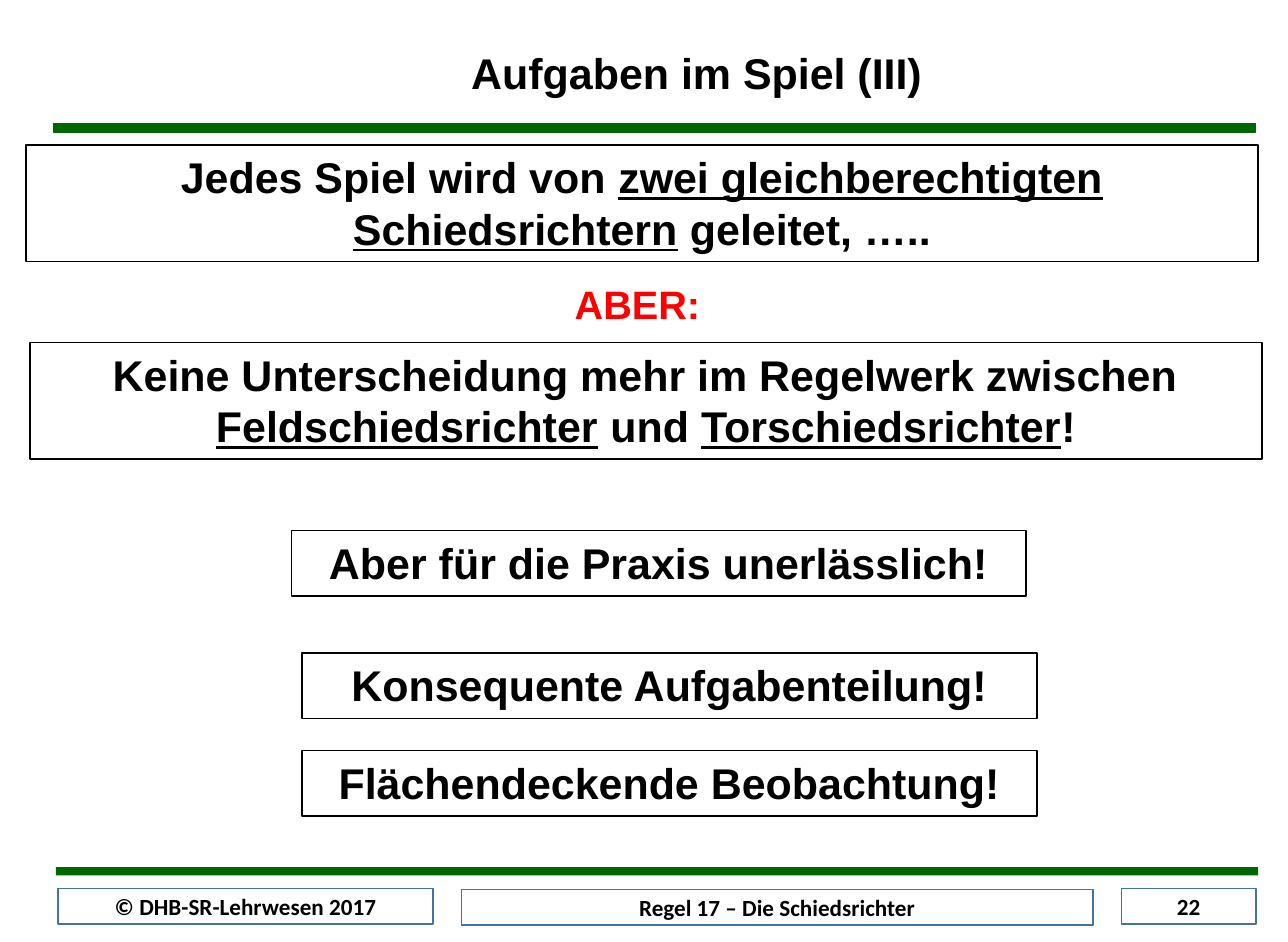
import pptx
import pptx.util
from pptx.dml.color import RGBColor
from pptx.enum.shapes import MSO_SHAPE
from pptx.enum.text import MSO_ANCHOR, PP_ALIGN

Inches, Pt = pptx.util.Inches, pptx.util.Pt
GREEN = RGBColor(0x00, 0x66, 0x00)
BLUE = RGBColor(0x43, 0x73, 0x9E)
BLACK = RGBColor(0x00, 0x00, 0x00)
WHITE = RGBColor(0xFF, 0xFF, 0xFF)
RED = RGBColor(0xFF, 0x00, 0x00)

deck = pptx.Presentation()
deck.slide_width, deck.slide_height = Inches(10.83), Inches(7.92)
page = deck.slides.add_slide(deck.slide_layouts[6])


def add_box(left, top, width, height, fill, line, line_width=1):
    box = page.shapes.add_shape(MSO_SHAPE.RECTANGLE, Inches(left), Inches(top),
                                Inches(width), Inches(height))
    box.shadow.inherit = False
    box.fill.solid()
    box.fill.fore_color.rgb = fill
    box.line.color.rgb = line
    box.line.width = Pt(line_width)
    return box


def write(box, text, size, font="Arial", color=BLACK, anchor=MSO_ANCHOR.TOP):
    """Fill the box with centred bold lines; words between underscores are underlined."""
    frame = box.text_frame
    frame.word_wrap = True
    frame.vertical_anchor = anchor
    frame.margin_left = frame.margin_right = Inches(0.11)
    frame.margin_top = frame.margin_bottom = Inches(0.05)
    for number, line in enumerate(text.split("\n")):
        para = frame.add_paragraph() if number else frame.paragraphs[0]
        para.alignment = PP_ALIGN.CENTER
        para.font.name, para.font.size, para.font.bold = font, Pt(size), True
        para.font.color.rgb = color
        for position, words in enumerate(line.split("_")):
            if words:
                span = para.add_run()
                span.text = words
                if position % 2:
                    span.font.underline = True


# Green rules
add_box(0.45, 1.04, 10.11, 0.07, GREEN, GREEN, 0.75)
add_box(0.47, 7.29, 10.11, 0.07, GREEN, GREEN).line.fill.background()

# Footer
for left, top, width, text in [
    (0.49, 7.47, 3.15, "© DHB-SR-Lehrwesen 2017"),
    (9.43, 7.47, 1.13, "22"),
    (3.88, 7.48, 5.31, "Regel 17 – Die Schiedsrichter"),
]:
    footer = add_box(left, top, width, 0.3, WHITE, BLUE)
    write(footer, text, 14, "Calibri", anchor=MSO_ANCHOR.MIDDLE)

# Framed statements
WIDE, NARROW = (10.36, 0.98), (6.18, 0.55)
for left, top, size, text in [
    (0.22, 1.22, WIDE,
     "Jedes Spiel wird von _zwei gleichberechtigten Schiedsrichtern_ geleitet, ….."),
    (0.25, 2.88, WIDE,
     "Keine Unterscheidung mehr im Regelwerk zwischen\n"
     "_Feldschiedsrichter_ und _Torschiedsrichter_!"),
    (2.54, 5.49, NARROW, "Konsequente Aufgabenteilung!"),
    (2.54, 6.31, NARROW, "Flächendeckende Beobachtung!"),
    (2.45, 4.46, NARROW, "Aber für die Praxis unerlässlich!"),
]:
    write(add_box(left, top, *size, WHITE, BLACK), text, 26)

# Unframed headings
write(add_box(3.88, 2.3, 2.96, 0.51, WHITE, WHITE, 1.5), "ABER:", 24, color=RED)
write(add_box(3.6, 0.34, 4.52, 0.55, WHITE, WHITE), "Aufgaben im Spiel (III)", 26)

deck.save("out.pptx")
